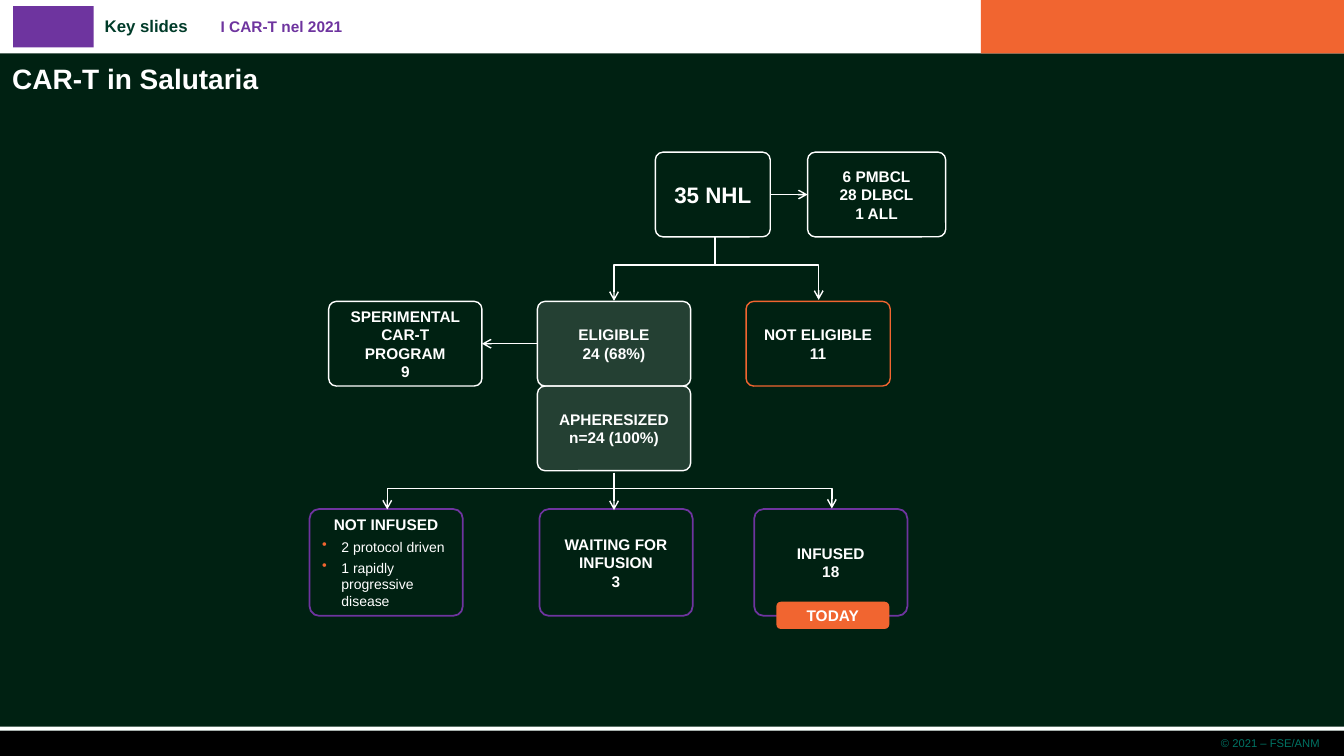
from lxml.etree import SubElement
from pptx import Presentation
from pptx.dml.color import RGBColor
from pptx.enum.shapes import MSO_CONNECTOR as Link, MSO_SHAPE as Shape
from pptx.enum.text import MSO_ANCHOR as Anchor, PP_ALIGN as Align
from pptx.oxml.ns import qn
from pptx.util import Inches, Pt

WIDTH, HEIGHT = 13.33, 7.5
FONT = "Arial"
WHITE, ORANGE, PURPLE = "FFFFFF", "F16530", "6E349F"
DARK, BLACK, GREEN, TEAL = "002112", "000000", "003B29", "007364"

# Content: left, top, width, height, colour
BARS = [
    (0, 0, WIDTH, 0.53, WHITE),
    (9.73, 0, WIDTH - 9.73, 0.53, ORANGE),
    (0, 7.25, WIDTH, 0.25, BLACK),
    (0, 7.21, WIDTH, 0.04, WHITE),
    (0.13, 0.06, 0.8, 0.41, PURPLE),
]
# Text, left, top, width, size, colour, bold, alignment
LABELS = [
    ("Key slides", 0.94, 0.11, 1.2, 12, GREEN, True, Align.LEFT),
    ("I CAR-T nel 2021", 2.09, 0.12, 5.7, 11, PURPLE, True, Align.LEFT),
    ("© 2021 – FSE/ANM", 0.63, 7.26, 12.56, 8, TEAL, False, Align.RIGHT),
]
TITLE = "CAR-T in Salutaria"

# Rows of the flow chart: top and height
ROWS = {"patients": (1.51, 0.84), "eligibility": (2.99, 0.84),
        "apheresis": (3.83, 0.84), "outcome": (5.05, 1.06)}
# Row, left, width, line colour, tinted, text size, heading lines, bullets
BOXES = [
    ("patients", 6.5, 1.14, WHITE, False, 16, ["35 NHL"], []),
    ("patients", 8.01, 1.37, WHITE, False, 11, ["6 PMBCL", "28 DLBCL", "1 ALL"], []),
    ("eligibility", 5.33, 1.52, WHITE, True, 11, ["ELIGIBLE", "24 (68%)"], []),
    ("apheresis", 5.33, 1.52, WHITE, True, 11, ["APHERESIZED", "n=24 (100%)"], []),
    ("eligibility", 7.4, 1.43, ORANGE, False, 11, ["NOT ELIGIBLE", "11"], []),
    ("eligibility", 3.26, 1.52, WHITE, False, 11, ["SPERIMENTAL CAR-T PROGRAM", "9"], []),
    ("outcome", 5.35, 1.52, PURPLE, False, 11, ["WAITING FOR INFUSION", "3"], []),
    ("outcome", 3.07, 1.52, PURPLE, False, 11, ["NOT INFUSED"],
     ["2 protocol driven", "1 rapidly progressive disease"]),
    ("outcome", 7.48, 1.52, PURPLE, False, 11, ["INFUSED", "18"], []),
]
# Left x, right x, tip y, y of the crossbar
BRACKETS = [(6.09, 8.12, 2.98, 2.62), (3.84, 8.25, 5.05, 4.84)]
# From x, y to x, y, arrowhead
LINES = [
    (6.09, 4.69, 6.09, 5.06, True),
    (5.33, 3.41, 4.78, 3.41, True),
    (7.09, 2.35, 7.09, 2.62, False),
    (7.64, 1.93, 8.01, 1.93, True),
]


def rgb(value):
    return RGBColor.from_string(value)


def style(paragraph, size, color, bold=True, align=Align.CENTER):
    paragraph.alignment = align
    for run in paragraph.runs:
        run.font.name, run.font.size, run.font.bold = FONT, Pt(size), bold
        run.font.color.rgb = rgb(color)


def add_box(kind, left, top, width, height, fill=None, line=None, weight=1.0):
    shape = slide.shapes.add_shape(kind, *map(Inches, (left, top, width, height)))
    shape.shadow.inherit = False
    if fill:
        shape.fill.solid()
        shape.fill.fore_color.rgb = rgb(fill)
    else:
        shape.fill.background()
    if line:
        shape.line.color.rgb = rgb(line)
        shape.line.width = Pt(weight)
    else:
        shape.line.fill.background()
    return shape


def write_lines(shape, lines, size):
    frame = shape.text_frame
    frame.word_wrap, frame.vertical_anchor = True, Anchor.MIDDLE
    frame.text = "\n".join(lines)
    for paragraph in frame.paragraphs:
        style(paragraph, size, WHITE)


def add_bullet(frame, text):
    paragraph = frame.add_paragraph()
    properties = paragraph._p.get_or_add_pPr()
    properties.set("marL", str(Inches(0.19)))
    properties.set("indent", str(-Inches(0.19)))
    color = SubElement(properties, qn("a:buClr"))
    SubElement(color, qn("a:srgbClr"), val=ORANGE)
    SubElement(properties, qn("a:buChar"), char="•")
    paragraph.text = text
    paragraph.space_before = Pt(3)
    style(paragraph, 10, WHITE, False, Align.LEFT)


def add_line(kind, x1, y1, x2, y2, ends):
    connector = slide.shapes.add_connector(kind, *map(Inches, (x1, y1, x2, y2)))
    connector.line.color.rgb = rgb(WHITE)
    connector.line.width = Pt(1)
    outline = connector.line._get_or_add_ln()
    for end in ends:
        SubElement(outline, qn(f"a:{end}"), type="arrow")
    SubElement(connector._element.spPr, qn("a:effectLst"))
    return connector


def add_bracket(left, right, tip, crossbar):
    """Elbow turned by 90 degrees, with both tips pointing down."""
    middle, half, depth = (left + right) / 2, (right - left) / 2, 0.01
    connector = add_line(Link.ELBOW, middle + depth / 2, tip + half,
                         middle - depth / 2, tip - half, ("headEnd", "tailEnd"))
    properties = connector._element.spPr
    properties.find(qn("a:xfrm")).set("rot", "5400000")
    geometry = properties.find(qn("a:prstGeom"))
    adjustments = geometry.find(qn("a:avLst"))
    if adjustments is None:
        adjustments = SubElement(geometry, qn("a:avLst"))
    share = round((tip - crossbar) / depth * 100000)
    SubElement(adjustments, qn("a:gd"), name="adj1", fmla=f"val {share}")


presentation = Presentation()
presentation.slide_width, presentation.slide_height = Inches(WIDTH), Inches(HEIGHT)
slide = presentation.slides.add_slide(presentation.slide_layouts[5])
slide.background.fill.solid()
slide.background.fill.fore_color.rgb = rgb(DARK)

# Header and footer
for *place, color in BARS:
    add_box(Shape.RECTANGLE, *place, fill=color)
for text, left, top, width, size, color, bold, align in LABELS:
    label = slide.shapes.add_textbox(*map(Inches, (left, top, width, 0.3)))
    label.text_frame.word_wrap = True
    label.text_frame.text = text
    style(label.text_frame.paragraphs[0], size, color, bold, align)

# Title
title = slide.shapes.title
title.left, title.top, title.width, title.height = map(Inches, (0, 0.56, 12.86, 0.53))
title.text_frame.text = TITLE
title.text_frame.vertical_anchor = Anchor.TOP
title.text_frame.margin_left = Inches(0.12)
style(title.text_frame.paragraphs[0], 20, WHITE, align=Align.LEFT)

# Boxes of the flow chart
for row, left, width, line, tinted, size, lines, bullets in BOXES:
    top, height = ROWS[row]
    box = add_box(Shape.ROUNDED_RECTANGLE, left, top, width, height,
                  WHITE if tinted else None, line, 1.25 if row == "outcome" else 1)
    box.adjustments[0] = 0.09
    if tinted:
        tint = box._element.spPr.find(qn("a:solidFill"))[0]
        SubElement(tint, qn("a:alpha"), val="14000")
    write_lines(box, lines, size)
    for bullet in bullets:
        add_bullet(box.text_frame, bullet)

today = add_box(Shape.ROUNDED_RECTANGLE, 7.7, 5.97, 1.12, 0.27, fill=ORANGE)
write_lines(today, ["TODAY"], 11)

# Connectors
for bracket in BRACKETS:
    add_bracket(*bracket)
for *points, arrow in LINES:
    add_line(Link.STRAIGHT, *points, ("tailEnd",) if arrow else ())

presentation.save("out.pptx")
